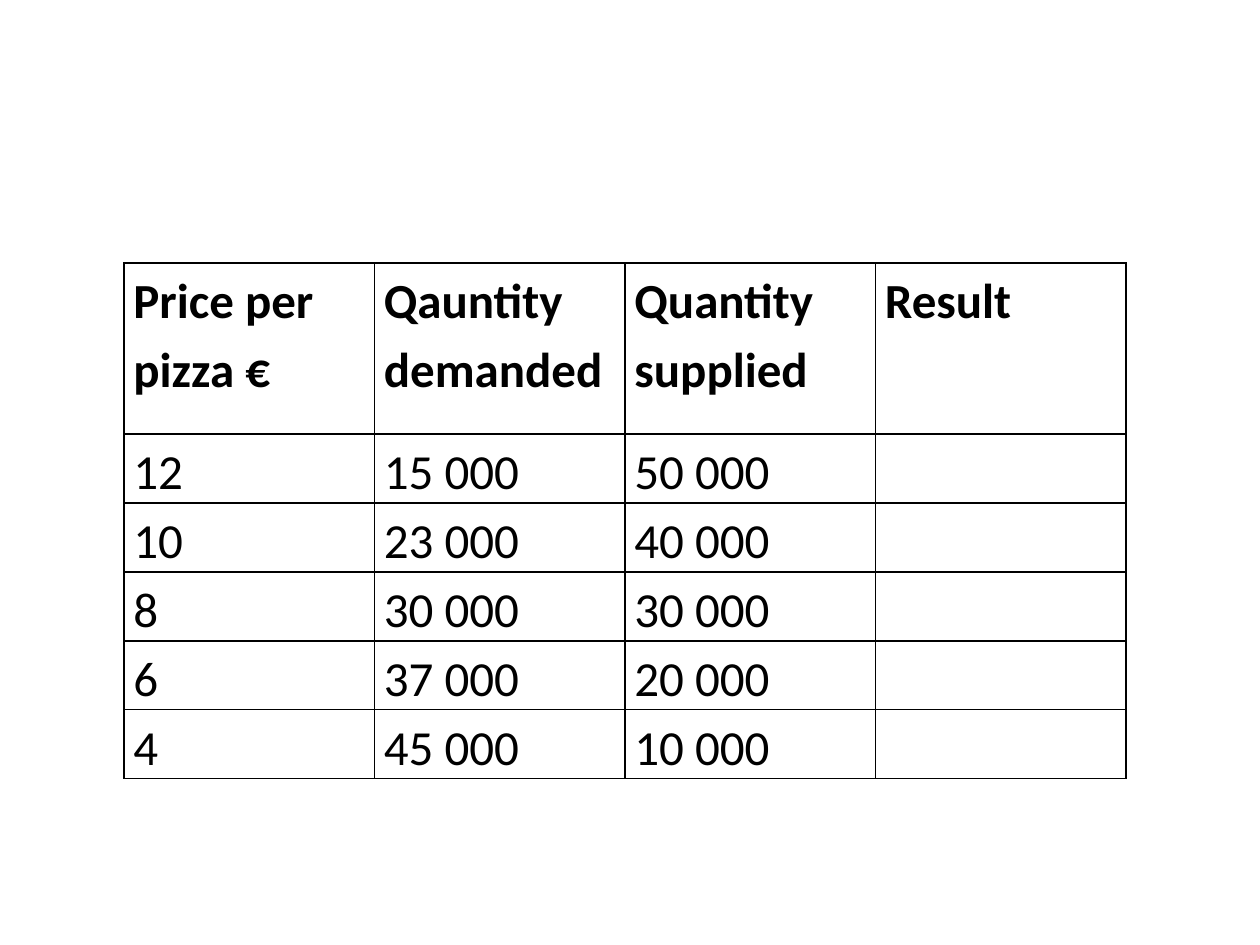
"""Build a slide with a supply and demand table for pizza prices."""
from lxml.etree import SubElement
from pptx import Presentation
from pptx.dml.color import RGBColor
from pptx.oxml.ns import qn
from pptx.util import Cm, Pt

COLORS = {"text": "000000", "border": "000000"}
FONT = "Calibri"
HEADINGS = ["Price per pizza €", "Qauntity demanded", "Quantity supplied", "Result"]
OFFERS = [
    ("12", "15 000", "50 000", ""),
    ("10", "23 000", "40 000", ""),
    ("8", "30 000", "30 000", ""),
    ("6", "37 000", "20 000", ""),
    ("4", "45 000", "10 000", ""),
]
COLUMN_WIDTH = Cm(5.05)
HEADING_HEIGHT = Cm(3.45)
OFFER_HEIGHT = Cm(1.36)


def add_borders(cell):
    properties = cell._tc.get_or_add_tcPr()
    for side in ("lnL", "lnR", "lnT", "lnB"):
        line = SubElement(properties, qn(f"a:{side}"), w=str(Pt(1)))
        fill = SubElement(line, qn("a:solidFill"))
        SubElement(fill, qn("a:srgbClr"), val=COLORS["border"])


def fill_cell(cell, text, bold):
    add_borders(cell)
    cell.fill.background()
    cell.margin_left = cell.margin_right = Cm(0.19)
    cell.margin_top = cell.margin_bottom = Cm(0)
    if not text:
        return
    para = cell.text_frame.paragraphs[0]
    para.line_spacing = 1.15
    span = para.add_run()
    span.text = text
    span.font.name = FONT
    span.font.size = Pt(28)
    span.font.bold = bold
    span.font.color.rgb = RGBColor.from_string(COLORS["text"])


def add_price_table(page):
    rows = [HEADINGS, *OFFERS]
    width = COLUMN_WIDTH * len(HEADINGS)
    height = HEADING_HEIGHT + OFFER_HEIGHT * len(OFFERS)
    frame = page.shapes.add_table(
        len(rows), len(HEADINGS), Cm(2.5), Cm(5.3), width, height
    )
    table = frame.table
    table.horz_banding = False
    for column in table.columns:
        column.width = COLUMN_WIDTH
    for index, texts in enumerate(rows):
        is_heading = index == 0
        table.rows[index].height = HEADING_HEIGHT if is_heading else OFFER_HEIGHT
        for cell, text in zip(table.rows[index].cells, texts):
            fill_cell(cell, text, is_heading)


def main():
    deck = Presentation()
    deck.slide_width = Cm(25.4)
    deck.slide_height = Cm(19.05)
    page = deck.slides.add_slide(deck.slide_layouts[6])
    add_price_table(page)
    deck.save("out.pptx")


if __name__ == "__main__":
    main()
